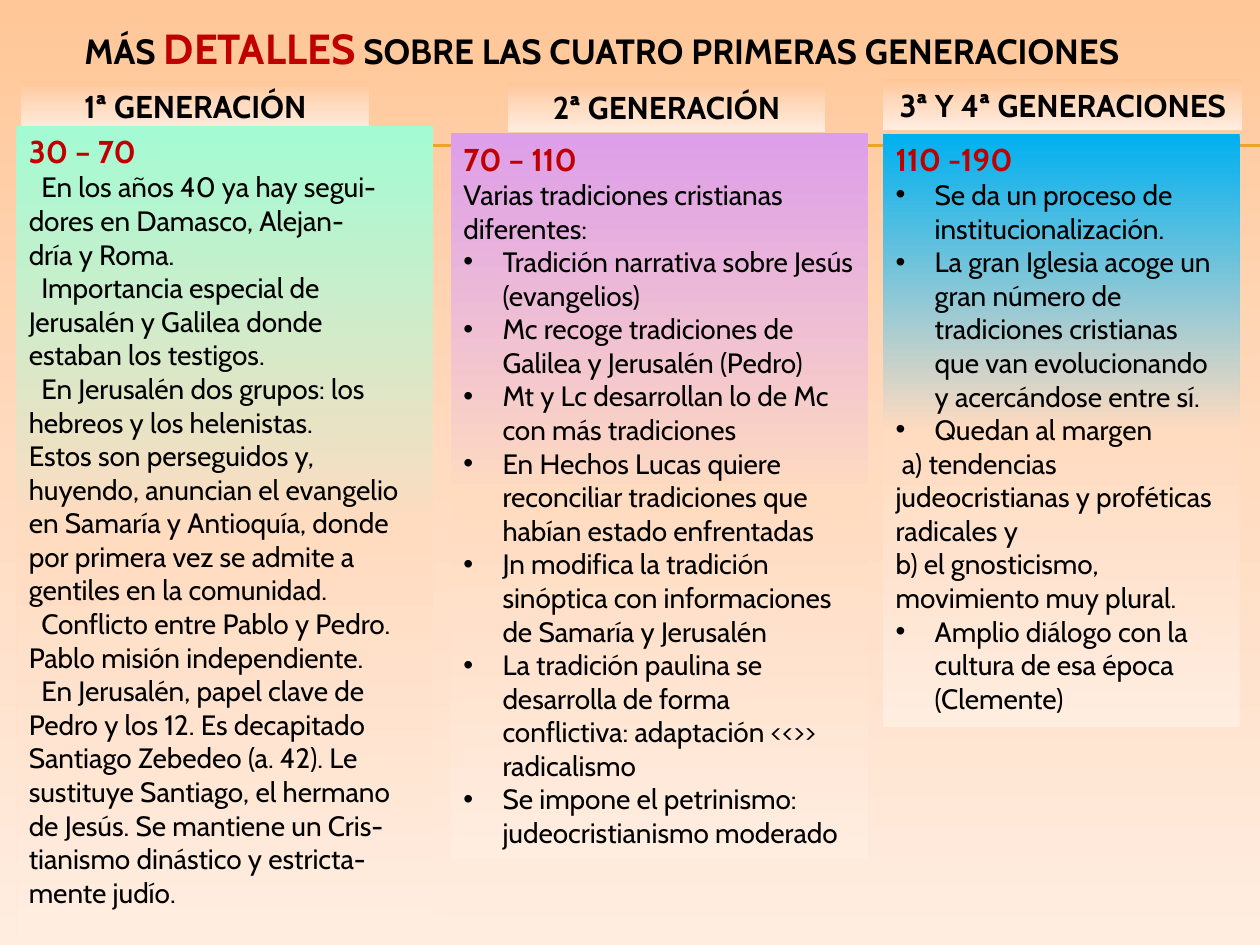
import copy
import pptx
import pptx.util
import pptx.dml.color
import pptx.enum.shapes
import pptx.enum.text
import lxml.etree

WIDE, HIGH = 10, 7.5
PEACH, RED, BLACK, GOLD = "FFC798", "C00000", "000000", "F0A22E"
FADE = ["FFDBC0", "FFEDE0"]
ALIGN = pptx.enum.text.PP_ALIGN
INDENTS = {"plain": (0, 0), "first": (0, 0.1), "sub": (0, 0.05), "bullet": (0.31, -0.31)}

COLUMNS = [
    dict(
        head="1ª GENERACIÓN", tab=(0.17, 0.64, 2.76, 0.4),
        years="30 – 70", box=(0.13, 1, 3.31, 6.42), tint="A3FBD3",
        items=[
            ("first", "En los años 40 ya hay segui- dores en Damasco, Alejan-"),
            ("plain", "dría y Roma."),
            ("first", "Importancia especial de Jerusalén y Galilea donde"),
            ("plain", "estaban los testigos."),
            ("first", "En Jerusalén dos grupos: los hebreos y los helenistas."),
            ("plain", "Estos son perseguidos y, huyendo, anuncian el evangelio en Samaría y "
                      "Antioquía, donde por primera vez se admite a gentiles en la comunidad."),
            ("first", "Conflicto entre Pablo y Pedro. Pablo misión independiente."),
            ("first", "En Jerusalén, papel clave de Pedro y los 12. Es decapitado Santiago "
                      "Zebedeo (a. 42). Le sustituye Santiago, el hermano de Jesús. Se mantiene "
                      "un Cris- tianismo dinástico y estricta- mente judío."),
        ],
    ),
    dict(
        head="2ª GENERACIÓN", tab=(4.03, 0.65, 2.52, 0.4),
        years="70 – 110", box=(3.58, 1.06, 3.31, 5.76), tint="DD9FE9",
        items=[
            ("plain", "Varias tradiciones cristianas diferentes:"),
            ("bullet", "Tradición narrativa sobre Jesús (evangelios)"),
            ("bullet", "Mc recoge tradiciones de Galilea y Jerusalén (Pedro)"),
            ("bullet", "Mt y Lc desarrollan lo de Mc con más tradiciones"),
            ("bullet", "En Hechos Lucas quiere reconciliar tradiciones que habían estado enfrentadas"),
            ("bullet", "Jn modifica la tradición sinóptica con informaciones de Samaría y Jerusalén"),
            ("bullet", "La tradición paulina se desarrolla de forma conflictiva: adaptación <<>> radicalismo"),
            ("bullet", "Se impone el petrinismo: judeocristianismo moderado"),
        ],
    ),
    dict(
        head="3ª Y 4ª GENERACIONES", tab=(7.01, 0.63, 2.85, 0.4),
        years="110 -190", box=(7.01, 1.06, 2.83, 4.71), tint="00B0F0",
        items=[
            ("bullet", "Se da un proceso de institucionalización."),
            ("bullet", "La gran Iglesia acoge un gran número de tradiciones cristianas que van "
                       "evolucionando y acercándose entre sí."),
            ("bullet", "Quedan al margen"),
            ("sub", "a) tendencias judeocristianas y proféticas radicales y"),
            ("plain", "b) el gnosticismo, movimiento muy plural."),
            ("bullet", "Amplio diálogo con la cultura de esa época (Clemente)"),
        ],
    ),
]


def inch(*sizes):
    """Turn inches into lengths."""
    return [pptx.util.Inches(size) for size in sizes]


def tone(code):
    """Turn a hex string into a colour."""
    return pptx.dml.color.RGBColor.from_string(code)


def blend(fill, top):
    """Fill from a top colour down into the shared fade."""
    fill.gradient()
    fill.gradient_angle = 270
    stop = fill.gradient_stops[0]._gs
    stop.addnext(copy.deepcopy(stop))
    for stop, code, place in zip(fill.gradient_stops, [top, *FADE], (0, 0.5, 1)):
        stop.color.rgb = tone(code)
        stop.position = place


def write(para, text, size=16, color=BLACK, bold=False):
    """Add a run of text to a paragraph."""
    run = para.add_run()
    run.text = text
    font = run.font
    font.name, font.size, font.bold = "Cabin", pptx.util.Pt(size), bold
    font.color.rgb = tone(color)


def indent(para, kind):
    """Set the margin, first line and bullet of a paragraph."""
    props = para._p.get_or_add_pPr()
    left, first = inch(*INDENTS[kind])
    props.set("marL", str(left))
    props.set("indent", str(first))
    if kind == "bullet":
        space = props.nsmap["a"]
        lxml.etree.SubElement(props, f"{{{space}}}buFont", typeface="Arial")
        lxml.etree.SubElement(props, f"{{{space}}}buChar", char="•")


def panel(slide, box, tint):
    """Draw a shaded rectangle and return its text frame."""
    kind = pptx.enum.shapes.MSO_SHAPE.RECTANGLE
    shape = slide.shapes.add_shape(kind, *inch(*box))
    shape.shadow.inherit = False
    shape.line.fill.background()
    blend(shape.fill, tint)
    frame = shape.text_frame
    frame.word_wrap = True
    frame.vertical_anchor = pptx.enum.text.MSO_ANCHOR.TOP
    frame.paragraphs[0].alignment = ALIGN.LEFT
    return frame


def column(slide, head, tab, years, box, tint, items):
    """Build one generation: its heading tab and its panel."""
    para = panel(slide, tab, PEACH).paragraphs[0]
    para.alignment = ALIGN.CENTER
    write(para, head, size=18, bold=True)
    frame = panel(slide, box, tint)
    write(frame.paragraphs[0], years, size=18, color=RED, bold=True)
    for kind, text in items:
        para = frame.add_paragraph()
        para.alignment = ALIGN.LEFT
        indent(para, kind)
        write(para, text)


def title(slide, box):
    """Place and write the slide title."""
    shape = slide.shapes.title
    shape.left, shape.top, shape.width, shape.height = inch(*box)
    frame = shape.text_frame
    frame.vertical_anchor = pptx.enum.text.MSO_ANCHOR.TOP
    para = frame.paragraphs[0]
    para.alignment = ALIGN.LEFT
    write(para, "MÁS ", size=20, bold=True)
    write(para, "DETALLES", size=24, color=RED, bold=True)
    write(para, " SOBRE LAS CUATRO PRIMERAS GENERACIONES", size=20, bold=True)


def rule(slide, left, top):
    """Draw a thin line to the right edge."""
    kind = pptx.enum.shapes.MSO_CONNECTOR.STRAIGHT
    line = slide.shapes.add_connector(kind, *inch(left, top, WIDE, top))
    line.line.color.rgb = tone(GOLD)
    line.line.width = pptx.util.Pt(0.75)
    props = line._element.spPr
    lxml.etree.SubElement(props, f"{{{props.nsmap['a']}}}effectLst")


def main():
    """Build and save the slide."""
    deck = pptx.Presentation()
    deck.slide_width, deck.slide_height = inch(WIDE, HIGH)
    slide = deck.slides.add_slide(deck.slide_layouts[5])
    blend(slide.background.fill, PEACH)
    for top in (1.15, 1.16):
        rule(slide, 0.56, top)
    title(slide, (0.57, 0.13, 8.82, 0.5))
    for part in COLUMNS:
        column(slide, **part)
    deck.save("out.pptx")


if __name__ == "__main__":
    main()
